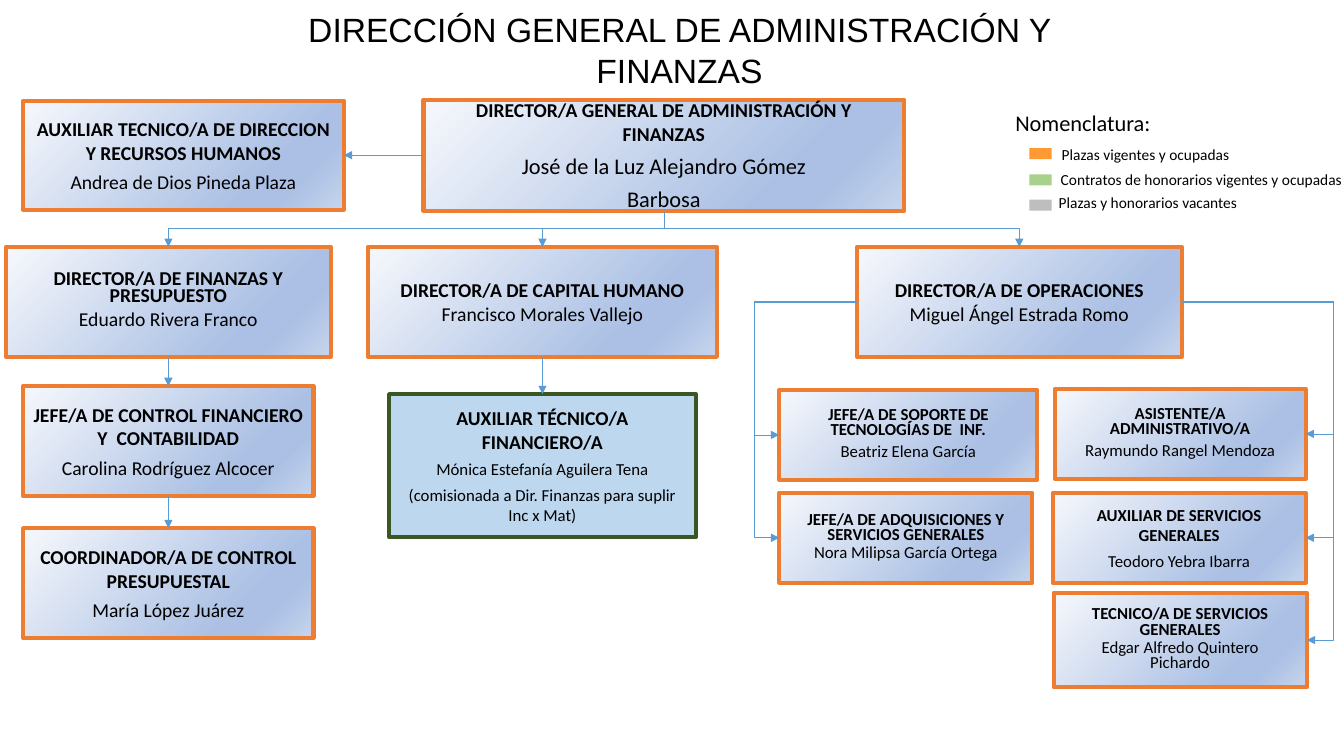
from lxml import etree
from pptx import Presentation
from pptx import util as u
from pptx.dml.color import RGBColor
from pptx.enum import shapes, text
from pptx.oxml import ns

PX = 9144
BLACK = RGBColor(0x00, 0x00, 0x00)
ORANGE = RGBColor(0xED, 0x7D, 0x31)
DARK_GREEN = RGBColor(0x38, 0x57, 0x23)
LIGHT_BLUE = RGBColor(0xBD, 0xD7, 0xEE)
LINK_BLUE = RGBColor(0x5B, 0x9B, 0xD5)
OCCUPIED = RGBColor(0xFF, 0x99, 0x33)
CONTRACT = RGBColor(0xA9, 0xD1, 0x8E)
VACANT = RGBColor(0xBE, 0xBE, 0xBE)
PALE = RGBColor(0xF6, 0xF8, 0xFC)
MID = RGBColor(0xAB, 0xC0, 0xE4)
SOFT = RGBColor(0xC7, 0xD5, 0xED)
GRADIENT = ((0, PALE), (74, MID), (83, MID), (100, SOFT))

TOP, LEFT, BOTTOM, RIGHT = range(4)

OPEN = dict(space_before=u.Pt(4.2))
LOOSE = dict(line_spacing=1.25)
FINANCE = dict(line_spacing=u.Pt(11.9), space_before=u.Pt(2.5))
NAME_14 = dict(line_spacing=u.Pt(16.6), space_before=u.Pt(0.8))
NAME_12 = dict(line_spacing=u.Pt(15), space_before=u.Pt(0.8))
TIGHT = dict(line_spacing=u.Pt(10.8), space_before=u.Pt(2.3))

POSTS = {
    "general": ((420, 99, 477, 110), [
        ("DIRECTOR/A GENERAL DE ADMINISTRACIÓN Y FINANZAS", 14, True, 0, OPEN),
        ("José de la Luz Alejandro Gómez Barbosa", 16, False, 63, LOOSE)]),
    "assistant": ((23, 100, 318, 108), [
        ("AUXILIAR TECNICO/A DE DIRECCION Y RECURSOS HUMANOS", 14, True, 0, OPEN),
        ("Andrea de Dios Pineda Plaza", 14, False, 0, OPEN)]),
    "finance": ((6, 245, 322, 109), [
        ("DIRECTOR/A DE FINANZAS Y PRESUPUESTO", 14, True, 1, FINANCE),
        ("Eduardo Rivera Franco", 14, False, 21, NAME_14)]),
    "human_capital": ((365, 245, 346, 109), [
        ("DIRECTOR/A DE CAPITAL HUMANO", 14, True, 0, OPEN),
        ("Francisco Morales Vallejo", 14, False, 34, NAME_14)]),
    "operations": ((850, 245, 322, 109), [
        ("DIRECTOR/A DE OPERACIONES", 14, True, 0, OPEN),
        ("Miguel Ángel Estrada Romo", 14, False, 14, NAME_14)]),
    "accounting": ((23, 383, 288, 109), [
        ("JEFE/A DE CONTROL FINANCIERO Y  CONTABILIDAD", 14, True, 0, OPEN),
        ("Carolina Rodríguez Alcocer", 14, False, 0, OPEN)]),
    "budget": ((23, 524, 288, 109), [
        ("COORDINADOR/A DE CONTROL PRESUPUESTAL", 14, True, 0, OPEN),
        ("María López Juárez", 14, False, 0, OPEN)]),
    "finance_aide": ((386, 391, 304, 142), [
        ("AUXILIAR TÉCNICO/A FINANCIERO/A", 14, True, 0, OPEN),
        ("Mónica Estefanía Aguilera Tena", 12, False, 0, OPEN),
        ("(comisionada a Dir. Finanzas para suplir Inc x Mat)", 12, False, 0, OPEN)]),
    "support": ((773, 387, 256, 89), [
        ("JEFE/A DE SOPORTE DE TECNOLOGÍAS DE  INF.", 12, True, 12, TIGHT),
        ("Beatriz Elena García", 12, False, 1, NAME_12)]),
    "purchasing": ((773, 489, 251, 89), [
        ("JEFE/A DE ADQUISICIONES Y SERVICIOS GENERALES", 12, True, 14, TIGHT),
        ("Nora Milipsa García Ortega", 12, False, 14, TIGHT)]),
    "admin_aide": ((1046, 386, 249, 89), [
        ("ASISTENTE/A ADMINISTRATIVO/A", 12, True, 22, TIGHT),
        ("Raymundo Rangel Mendoza", 12, False, 1, NAME_12)]),
    "services_aide": ((1044, 489, 251, 89), [
        ("AUXILIAR DE SERVICIOS GENERALES", 12, True, 0, OPEN),
        ("Teodoro Yebra Ibarra", 12, False, 0, OPEN)]),
    "services_technician": ((1045, 588, 251, 94), [
        ("TECNICO/A DE SERVICIOS GENERALES", 12, True, 13, TIGHT),
        ("Edgar Alfredo Quintero Pichardo", 12, False, 13, TIGHT)]),
}

STRAIGHT_LINKS = [
    ("general", LEFT, "assistant", RIGHT),
    ("finance", BOTTOM, "accounting", TOP),
    ("accounting", BOTTOM, "budget", TOP),
    ("human_capital", BOTTOM, "finance_aide", TOP),
]
SIDE_LINKS = [
    (LEFT, 748, ("support", "purchasing")),
    (RIGHT, 1322, ("admin_aide", "services_aide", "services_technician")),
]
LEGEND = [
    (OCCUPIED, 147, 1053, 143, "Plazas vigentes y ocupadas"),
    (CONTRACT, 173, 1052, 168, "Contratos de honorarios vigentes y ocupadas"),
    (VACANT, 198, 1050, 191, "Plazas y honorarios vacantes"),
]


def px(*lengths):
    return [u.Emu(length * PX) for length in lengths]


def apply(target, values):
    for name, value in values.items():
        setattr(target, name, value)


def write(paragraph, words, size, bold=False, face="Calibri"):
    run = paragraph.add_run()
    run.text = words
    apply(run.font, dict(name=face, size=u.Pt(size), bold=bold))
    run.font.color.rgb = BLACK


def add_title(slide, words):
    title = slide.shapes.title
    apply(title, dict(zip(("left", "top", "width", "height"), px(238, 4, 872, 86))))
    apply(title.text_frame, dict(vertical_anchor=text.MSO_ANCHOR.TOP, word_wrap=True,
                                 auto_size=text.MSO_AUTO_SIZE.NONE))
    heading = title.text_frame.paragraphs[0]
    heading.alignment = text.PP_ALIGN.CENTER
    write(heading, words, 24, face="Arial")


def shade(box):
    box.fill.gradient()
    box.fill.gradient_angle = 315
    stops = box._element.spPr.find(ns.qn("a:gradFill")).find(ns.qn("a:gsLst"))
    for stop in list(stops):
        stops.remove(stop)
    for percent, color in GRADIENT:
        stop = etree.SubElement(stops, ns.qn("a:gs"), pos=str(percent * 1000))
        etree.SubElement(stop, ns.qn("a:srgbClr"), val=str(color))


def add_rect(slide, place):
    rect = slide.shapes.add_shape(shapes.MSO_SHAPE.RECTANGLE, *px(*place))
    rect.shadow.inherit = False
    return rect


def add_post(slide, place, lines, fill=None, border=ORANGE):
    post = add_rect(slide, place)
    if fill is None:
        shade(post)
    else:
        post.fill.solid()
        post.fill.fore_color.rgb = fill
    post.line.color.rgb = border
    post.line.width = u.Pt(3)
    frame = post.text_frame
    apply(frame, dict(word_wrap=True, vertical_anchor=text.MSO_ANCHOR.MIDDLE))
    for index, (words, size, bold, margin, spacing) in enumerate(lines):
        paragraph = frame.add_paragraph() if index else frame.paragraphs[0]
        apply(paragraph, dict(spacing, alignment=text.PP_ALIGN.CENTER))
        for side in ("marL", "marR"):
            paragraph._p.get_or_add_pPr().set(side, str(margin * PX))
        write(paragraph, words, size, bold)
    return post


def add_link(slide, kind, start, start_side, end, end_side):
    link = slide.shapes.add_connector(kind, 0, 0, 0, 0)
    link.begin_connect(start, start_side)
    link.end_connect(end, end_side)
    link.line.color.rgb = LINK_BLUE
    link.line.width = u.Pt(0.5)
    etree.SubElement(link.line._get_or_add_ln(), ns.qn("a:tailEnd"), type="triangle")
    etree.SubElement(link._element.spPr, ns.qn("a:effectLst"))
    return link


def add_branch(slide, start, end):
    link = add_link(slide, shapes.MSO_CONNECTOR.ELBOW, start, BOTTOM, end, TOP)
    across, down = link.end_x - link.begin_x, link.end_y - link.begin_y
    middle_x, middle_y = link.begin_x + across // 2, link.begin_y + down // 2
    frame = link._element.spPr.find(ns.qn("a:xfrm"))
    frame.attrib.clear()
    frame.set("rot", "5400000" if across < 0 else "16200000")
    if across > 0:
        frame.set("flipH", "1")
    apply(link, dict(left=middle_x - down // 2, top=middle_y - abs(across) // 2,
                     width=down, height=abs(across)))


def add_side_link(slide, start, end, side, lane):
    link = add_link(slide, shapes.MSO_CONNECTOR.ELBOW, start, side, end, side)
    bend = (lane * PX - link.begin_x) / (link.end_x - link.begin_x)
    guides = link._element.spPr.find(ns.qn("a:prstGeom")).get_or_add_avLst()
    etree.SubElement(guides, ns.qn("a:gd"), name="adj1", fmla=f"val {round(bend * 100000)}")


def add_label(slide, place, words, size):
    frame = slide.shapes.add_textbox(*px(*place)).text_frame
    apply(frame, dict(word_wrap=False, margin_left=0, margin_right=0,
                      margin_top=PX, margin_bottom=0))
    frame.paragraphs[0].space_before = u.Pt(1.1)
    write(frame.paragraphs[0], words, size)


def add_legend(slide):
    add_label(slide, (1007, 107, 174, 28), "Nomenclatura:", 16)
    for color, swatch_top, left, top, words in LEGEND:
        swatch = add_rect(slide, (1021, swatch_top, 22, 11))
        swatch.fill.solid()
        swatch.fill.fore_color.rgb = color
        swatch.line.fill.background()
        add_label(slide, (left, top, 280, 20), words, 11)


def main():
    deck = Presentation()
    deck.slide_width, deck.slide_height = px(1333, 750)
    slide = deck.slides.add_slide(deck.slide_layouts[5])
    add_title(slide, "DIRECCIÓN GENERAL DE ADMINISTRACIÓN Y FINANZAS")
    special = {"finance_aide": dict(fill=LIGHT_BLUE, border=DARK_GREEN)}
    posts = {key: add_post(slide, place, lines, **special.get(key, {}))
             for key, (place, lines) in POSTS.items()}
    for start, start_side, end, end_side in STRAIGHT_LINKS:
        add_link(slide, shapes.MSO_CONNECTOR.STRAIGHT,
                 posts[start], start_side, posts[end], end_side)
    for area in ("finance", "human_capital", "operations"):
        add_branch(slide, posts["general"], posts[area])
    for side, lane, staff in SIDE_LINKS:
        for member in staff:
            add_side_link(slide, posts["operations"], posts[member], side, lane)
    add_legend(slide)
    deck.save("out.pptx")


if __name__ == "__main__":
    main()
